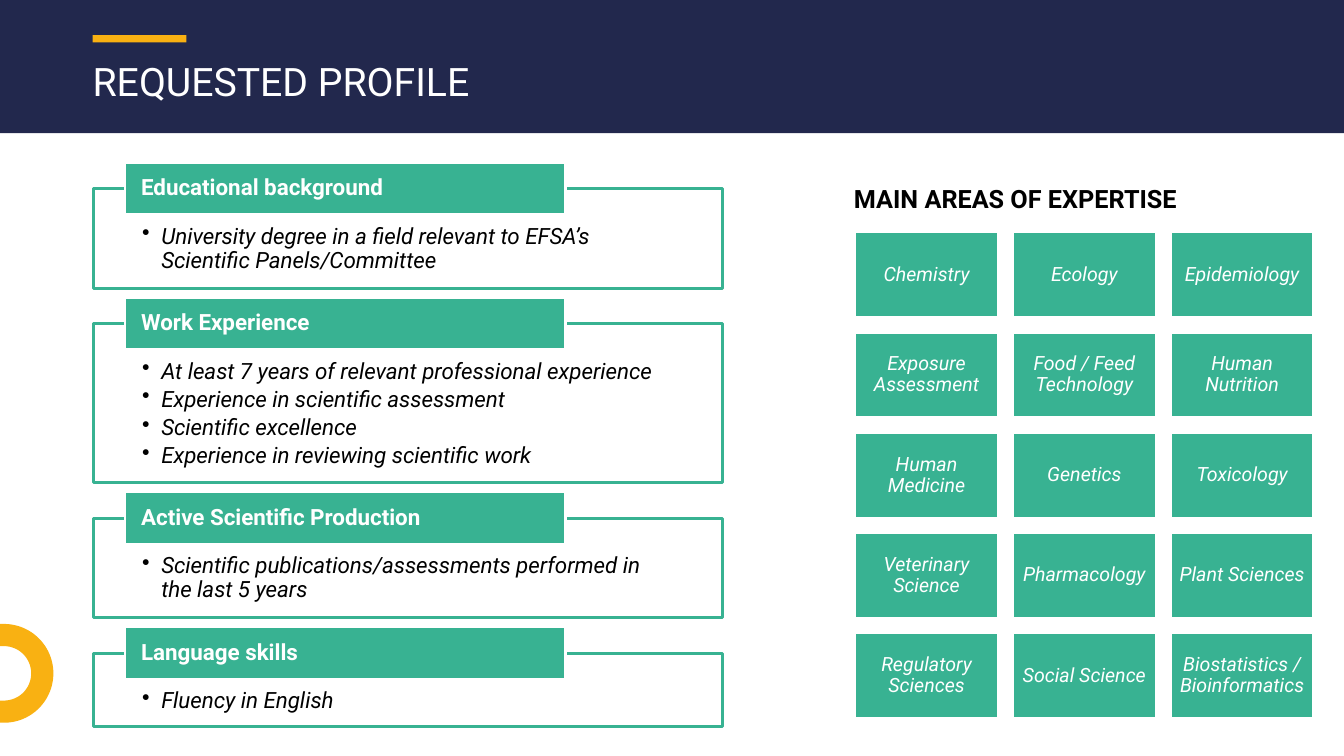
"""Build the requested profile slide."""
import math
from dataclasses import dataclass

from lxml import etree
from pptx import Presentation
from pptx import util as u
from pptx.dml import color
from pptx.enum import shapes, text
from pptx.oxml import ns

NAVY, AMBER, GREEN = "22284D", "F9B112", "38B292"
WHITE, BLACK = "FFFFFF", "000000"


@dataclass(frozen=True)
class Area:
    left: float
    top: float
    width: float
    height: float


@dataclass(frozen=True)
class Style:
    size: float
    color: str
    bold: bool = False
    italic: bool = False
    align: text.PP_ALIGN = text.PP_ALIGN.LEFT
    anchor: text.MSO_ANCHOR = text.MSO_ANCHOR.TOP
    insets: tuple[float, float, float, float] = (0.1, 0.05, 0.1, 0.05)
    line_spacing: float = 0.9
    space_after: float = 0
    bullet: bool = False


@dataclass(frozen=True)
class Panel:
    heading: str
    height: float
    items: tuple[str, ...]


TITLE = Style(28, WHITE)
SUBTITLE = Style(18, BLACK, bold=True, insets=(0.05,) * 4, line_spacing=1)
HEADING = Style(16, WHITE, bold=True, anchor=text.MSO_ANCHOR.MIDDLE,
                insets=(0.16, 0, 0.16, 0))
ITEM = Style(16, BLACK, italic=True, insets=(0.48, 0.36, 0.48, 0.12),
             space_after=2.8, bullet=True)
TILE = Style(14, WHITE, italic=True, align=text.PP_ALIGN.CENTER,
             anchor=text.MSO_ANCHOR.MIDDLE, insets=(0.06,) * 4)

PANELS = (
    Panel("Educational background", 0.99,
          ("University degree in a field relevant to EFSA’s Scientific Panels/Committee",)),
    Panel("Work Experience", 1.58,
          ("At least 7 years of relevant professional experience",
           "Experience in scientific assessment",
           "Scientific excellence",
           "Experience in reviewing scientific work")),
    Panel("Active Scientific Production", 0.99,
          ("Scientific publications/assessments performed in the last 5 years",)),
    Panel("Language skills", 0.73, ("Fluency in English",)),
)
EXPERTISE = (
    ("Chemistry", "Ecology", "Epidemiology"),
    ("Exposure Assessment", "Food / Feed Technology", "Human Nutrition"),
    ("Human Medicine", "Genetics", "Toxicology"),
    ("Veterinary Science", "Pharmacology", "Plant Sciences"),
    ("Regulatory Sciences", "Social Science", "Biostatistics / Bioinformatics"),
)


def rgb(value: str) -> color.RGBColor:
    return color.RGBColor.from_string(value)


def paint(shape, fill: str, line: str | None = None) -> None:
    shape.shadow.inherit = False
    shape.fill.solid()
    shape.fill.fore_color.rgb = rgb(fill)
    if line:
        shape.line.color.rgb = rgb(line)
        shape.line.width = u.Pt(2)
    else:
        shape.line.fill.background()


def add_bullet(para) -> None:
    properties = para._p.get_or_add_pPr()
    properties.set("marL", str(u.Inches(0.19)))
    properties.set("indent", str(u.Inches(-0.19)))
    etree.SubElement(properties, ns.qn("a:buChar")).set("char", "•")


def write(shape, lines: tuple[str, ...], style: Style) -> None:
    frame = shape.text_frame
    frame.word_wrap = True
    frame.vertical_anchor = style.anchor
    (frame.margin_left, frame.margin_top,
     frame.margin_right, frame.margin_bottom) = map(u.Inches, style.insets)
    for index, line in enumerate(lines):
        para = frame.add_paragraph() if index else frame.paragraphs[0]
        para.text = line
        if style.bullet:
            add_bullet(para)
        para.alignment = style.align
        para.line_spacing = style.line_spacing
        para.space_after = u.Pt(style.space_after)
        font = para.font
        font.name, font.size = "Roboto", u.Pt(style.size)
        font.bold, font.italic = style.bold, style.italic
        font.color.rgb = rgb(style.color)


def place(area: Area) -> tuple[u.Length, ...]:
    return tuple(map(u.Inches, (area.left, area.top, area.width, area.height)))


def add_box(page, area: Area, fill: str, line: str | None = None):
    box = page.shapes.add_shape(shapes.MSO_SHAPE.RECTANGLE, *place(area))
    paint(box, fill, line)
    return box


def add_label(page, area: Area, label: str, style: Style) -> None:
    write(page.shapes.add_textbox(*place(area)), (label,), style)


def add_half_ring(page, x: float, y: float, outer: float, inner: float) -> None:
    def arc(radius: float) -> list[tuple[float, float]]:
        angles = [math.radians(degree) for degree in range(-90, 91, 3)]
        return [(x + radius * math.cos(a), y + radius * math.sin(a)) for a in angles]

    points = [(0, y - outer), *arc(outer), (0, y + outer),
              (0, y + inner), *reversed(arc(inner)), (0, y - inner)]
    start, *rest = [(u.Inches(px), u.Inches(py)) for px, py in points]
    builder = page.shapes.build_freeform(*start)
    builder.add_line_segments(rest, close=True)
    paint(builder.convert_to_shape(), AMBER)


def add_panels(page, top: float, gap: float) -> None:
    for panel in PANELS:
        frame = add_box(page, Area(0.93, top, 6.24, panel.height), WHITE, GREEN)
        write(frame, panel.items, ITEM)
        tab = add_box(page, Area(1.24, top - 0.26, 4.37, 0.52), GREEN, WHITE)
        write(tab, (panel.heading,), HEADING)
        top += panel.height + gap


def add_expertise(page, first: tuple[float, float], last: tuple[float, float]) -> None:
    step_x = (last[0] - first[0]) / (len(EXPERTISE[0]) - 1)
    step_y = (last[1] - first[1]) / (len(EXPERTISE) - 1)
    for row, names in enumerate(EXPERTISE):
        for column, name in enumerate(names):
            area = Area(first[0] + column * step_x, first[1] + row * step_y, 1.42, 0.85)
            write(add_box(page, area, GREEN, WHITE), (name,), TILE)


def main() -> None:
    deck = Presentation()
    deck.slide_width, deck.slide_height = u.Inches(13.33), u.Inches(7.5)
    page = deck.slides.add_slide(deck.slide_layouts[6])
    add_box(page, Area(0, 0, 13.33, 1.32), NAVY)
    add_box(page, Area(0.92, 0.35, 0.93, 0.07), AMBER)
    add_half_ring(page, 0.04, 6.68, 0.49, 0.27)
    add_label(page, Area(0.82, 0.57, 10.99, 0.69), "REQUESTED PROFILE", TITLE)
    add_panels(page, top=1.87, gap=0.35)
    add_expertise(page, first=(8.48, 2.3), last=(11.61, 6.28))
    add_label(page, Area(8.42, 1.77, 3.86, 0.4), "MAIN AREAS OF EXPERTISE", SUBTITLE)
    deck.save("out.pptx")


if __name__ == "__main__":
    main()
